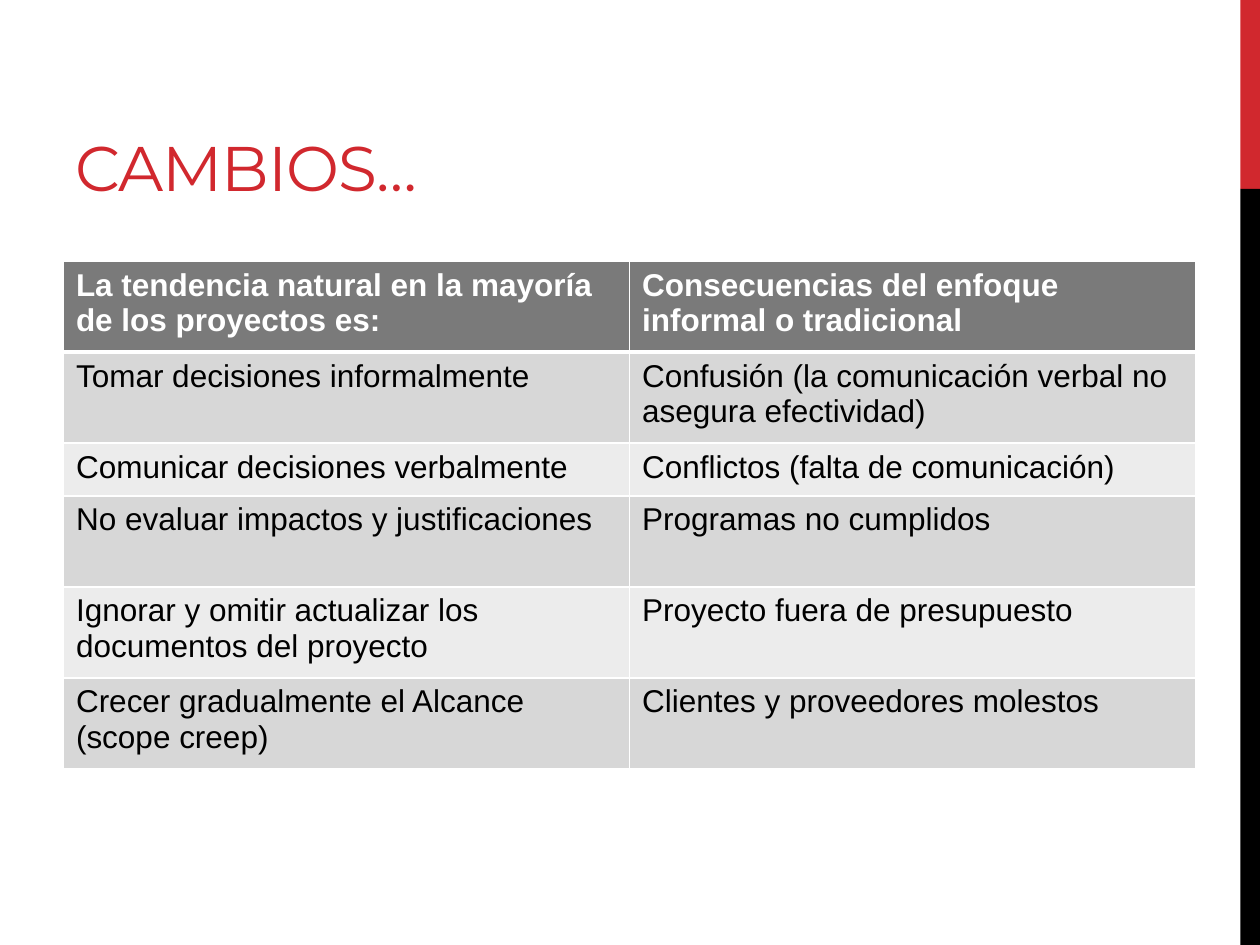
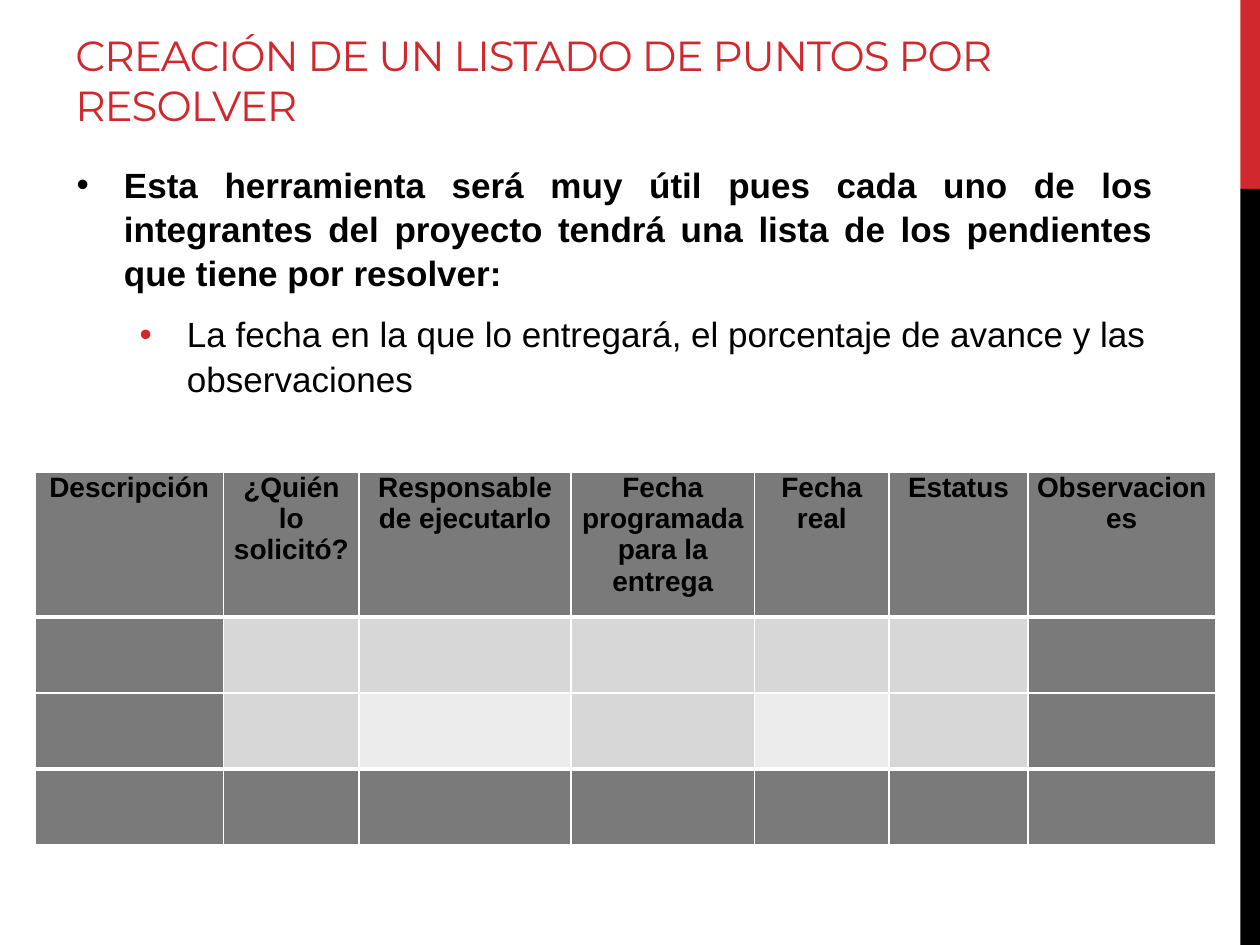
"""Build two slides on project changes and the list of open points."""
import pptx
import pptx.util
import pptx.dml.color
import pptx.enum.shapes
import pptx.enum.text
import pptx.oxml
import pptx.oxml.ns
import lxml.etree

Pt = pptx.util.Pt
RGB = pptx.dml.color.RGBColor.from_string
ALIGN = pptx.enum.text.PP_ALIGN
qn = pptx.oxml.ns.qn
COLORS = {"red": "D1282E", "black": "000000", "white": "FFFFFF",
          "dark": "7A7A7A", "mid": "D7D7D7", "light": "ECECEC"}


def style(para, size, color, bold=False, font="Arial"):
    for run in para.runs:
        run.font.name = font
        run.font.size = Pt(size)
        run.font.bold = bold
        run.font.color.rgb = RGB(COLORS[color])


def paint(cell, fill, top=1, base=1):
    props = cell._tc.get_or_add_tcPr()
    for side, width in (("L", 1), ("R", 1), ("T", top), ("B", base)):
        line = lxml.etree.SubElement(props, qn(f"a:ln{side}"), w=str(Pt(width)))
        solid = lxml.etree.SubElement(line, qn("a:solidFill"))
        lxml.etree.SubElement(solid, qn("a:srgbClr"), val=COLORS["white"])
    cell.fill.solid()
    cell.fill.fore_color.rgb = RGB(COLORS[fill])


deck = pptx.Presentation()
deck.slide_width, deck.slide_height = Pt(720), Pt(540)

titles = [("CAMBIOS…", 36, 456, 108),
          ("CREACIÓN DE UN LISTADO DE PUNTOS POR RESOLVER", 24, 551, 65.5)]
slides = []
for title, size, width, height in titles:
    slide = deck.slides.add_slide(deck.slide_layouts[6])
    slides.append(slide)
    for top, tall, color in ((0, 108, "red"), (108, 432, "black")):
        band = slide.shapes.add_shape(pptx.enum.shapes.MSO_SHAPE.RECTANGLE,
                                      Pt(708.75), Pt(top), Pt(11.25), Pt(tall))
        band.shadow.inherit = False
        band.fill.solid()
        band.fill.fore_color.rgb = RGB(COLORS[color])
        band.line.fill.background()
    frame = slide.shapes.add_textbox(Pt(36), Pt(12.25), Pt(width), Pt(height)).text_frame
    frame.word_wrap = True
    frame.vertical_anchor = pptx.enum.text.MSO_ANCHOR.BOTTOM
    frame.text = title
    style(frame.paragraphs[0], size, "red", font="Montserrat")
    frame.paragraphs[0].runs[0]._r.get_or_add_rPr().set("spc", "-60")
changes, points = slides

habits = [
    ("La tendencia natural en la mayoría de los proyectos es:",
     "Consecuencias del enfoque informal o tradicional"),
    ("Tomar decisiones informalmente",
     "Confusión (la comunicación verbal no asegura efectividad)"),
    ("Comunicar decisiones verbalmente", "Conflictos (falta de comunicación)"),
    ("No evaluar impactos y justificaciones", "Programas no cumplidos"),
    ("Ignorar y omitir actualizar los documentos del proyecto",
     "Proyecto fuera de presupuesto"),
    ("Crecer gradualmente el Alcance (scope creep)",
     "Clientes y proveedores molestos"),
]
table = changes.shapes.add_table(len(habits), 2, Pt(36.25), Pt(149.25),
                                 Pt(647), Pt(290)).table
for col in table.columns:
    col.width = Pt(323.5)
for row, pair in enumerate(habits):
    table.rows[row].height = Pt(30.25 if row == 2 else 52)
    head = row == 0
    fill = "dark" if head else "mid" if row % 2 else "light"
    for col, text in enumerate(pair):
        cell = table.cell(row, col)
        cell.text_frame.text = text
        style(cell.text_frame.paragraphs[0], 18, "white" if head else "black", head)
        paint(cell, fill, top=3 if row == 1 else 1, base=3 if head else 1)

body = points.shapes.add_textbox(Pt(36.75), Pt(88.5), Pt(629.25), Pt(394)).text_frame
body.word_wrap = True
items = [
    ("Esta herramienta será muy útil pues cada uno de los integrantes del proyecto "
     "tendrá una lista de los pendientes que tiene por resolver:",
     27, "black", True, ALIGN.JUSTIFY),
    ("La fecha en la que lo entregará, el porcentaje de avance y las observaciones",
     63, "red", False, ALIGN.LEFT),
]
for level, (text, indent, color, bold, align) in enumerate(items):
    para = body.add_paragraph() if level else body.paragraphs[0]
    para.text = text
    para.level = level
    para.alignment = align
    para.line_spacing = 1.05
    para.space_before = Pt(4)
    para.space_after = Pt(0 if level else 6)
    style(para, 20, "black", bold)
    props = para._p.get_or_add_pPr()
    props.set("marL", str(Pt(indent)))
    props.set("indent", str(Pt(-27)))
    tint = lxml.etree.SubElement(props, qn("a:buClr"))
    lxml.etree.SubElement(tint, qn("a:srgbClr"), val=COLORS[color])
    lxml.etree.SubElement(props, qn("a:buFont"), typeface="Arial")
    lxml.etree.SubElement(props, qn("a:buChar"), char="•")

heads = [("Descripción", 107.75), ("¿Quién lo solicitó?", 77.5),
         ("Responsable de ejecutarlo", 121), ("Fecha programada para la entrega", 105),
         ("Fecha real", 76.75), ("Estatus", 79.5), ("Observaciones", 107)]
tall = [82.5, 43.5, 43.5, 43.5]
table = points.shapes.add_table(len(tall), len(heads), Pt(20), Pt(270),
                                Pt(674.5), Pt(sum(tall))).table
last = len(heads) - 1
for row, height in enumerate(tall):
    table.rows[row].height = Pt(height)
    for col, (text, width) in enumerate(heads):
        table.columns[col].width = Pt(width)
        cell = table.cell(row, col)
        if row in (0, 3) or col in (0, last):
            fill = "dark"
        else:
            fill = "light" if row == 2 and col % 2 == 0 else "mid"
        paint(cell, fill, top=3 if row in (1, 3) else 1, base=3 if row in (0, 2) else 1)
        if row == 0:
            cell.margin_left = cell.margin_right = Pt(5)
            cell.margin_top = cell.margin_bottom = Pt(0)
            cell.text_frame.text = text
            para = cell.text_frame.paragraphs[0]
            para.alignment = ALIGN.CENTER
            para.space_before = para.space_after = Pt(4)
            style(para, 16, "black", True)

deck.save("out.pptx")
